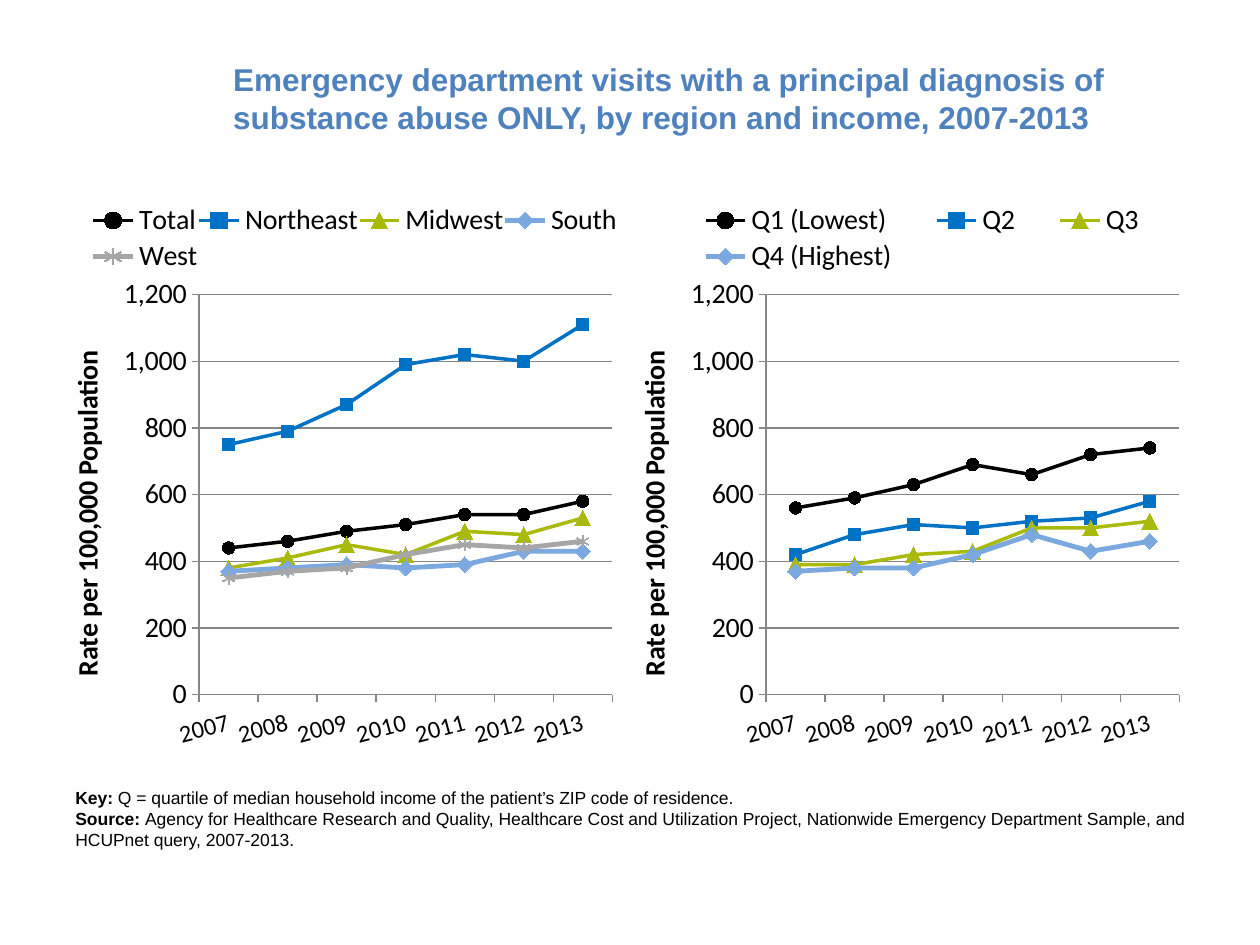
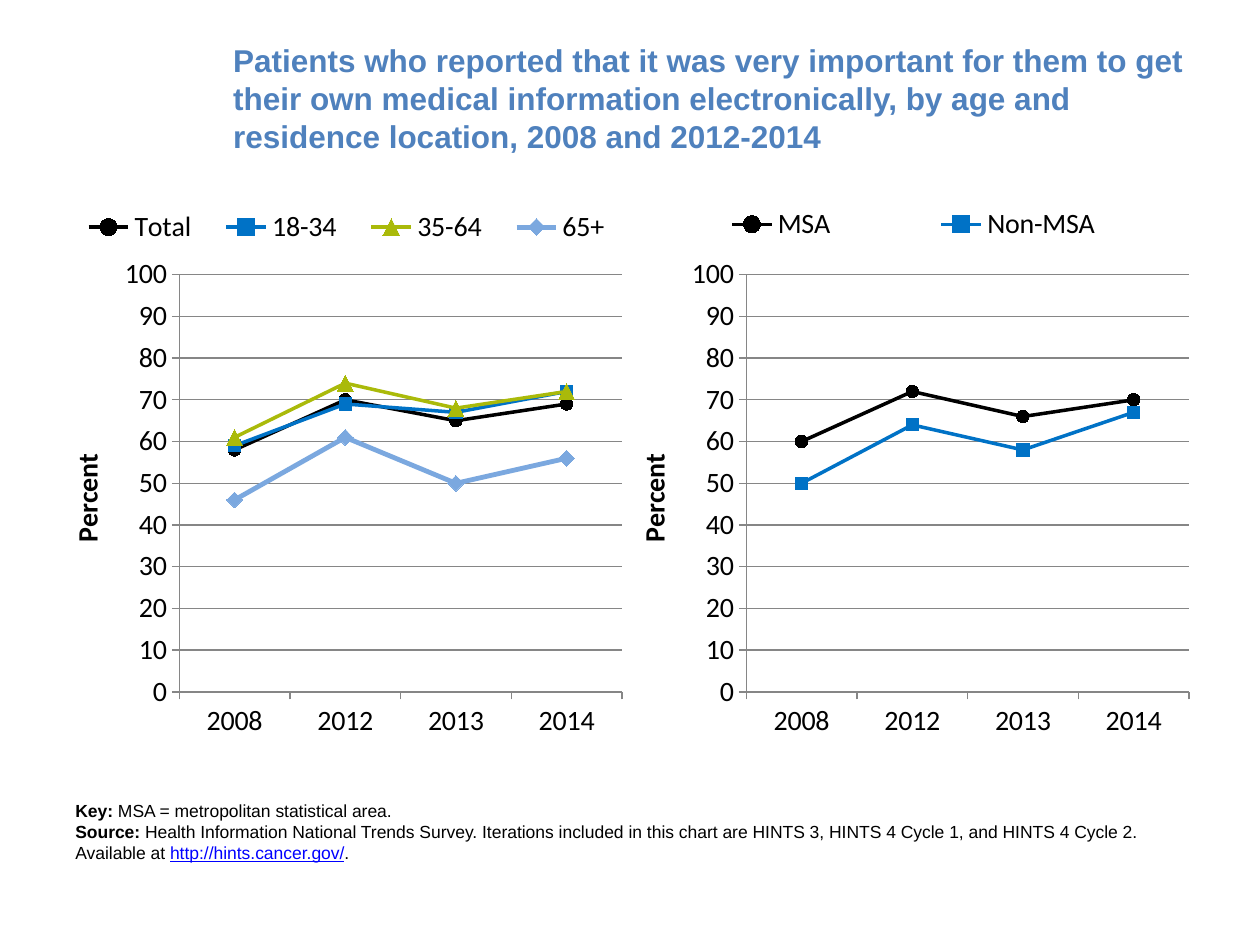
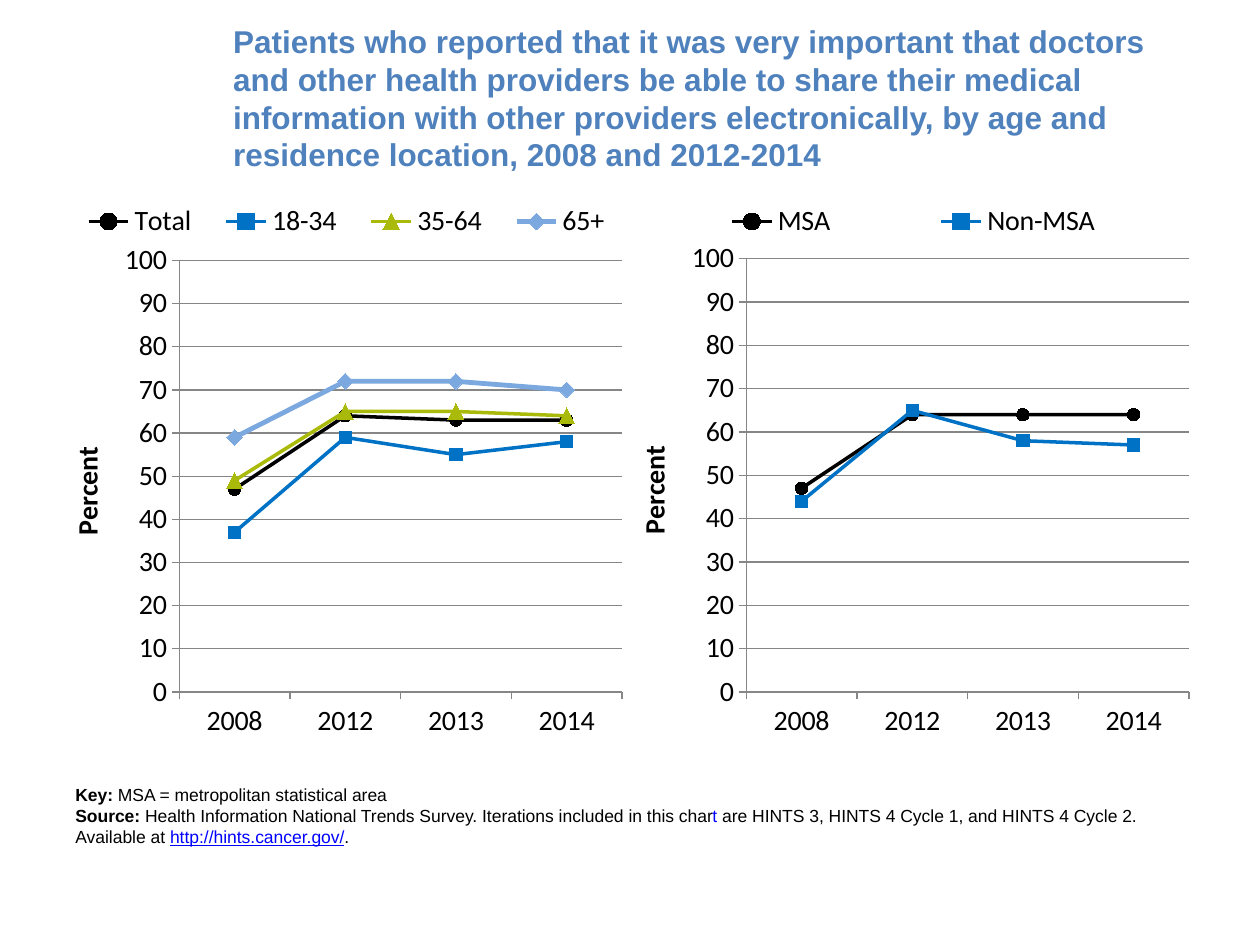
from dataclasses import dataclass

from pptx import Presentation
from pptx.chart.axis import CategoryAxis, ValueAxis
from pptx.chart.chart import Chart
from pptx.chart.data import CategoryChartData
from pptx.chart.series import LineSeries
from pptx.dml.color import RGBColor
from pptx.enum.chart import XL_CHART_TYPE, XL_LEGEND_POSITION, XL_MARKER_STYLE, XL_TICK_MARK
from pptx.enum.text import MSO_ANCHOR, MSO_AUTO_SIZE, PP_ALIGN
from pptx.oxml import parse_xml
from pptx.oxml.ns import nsdecls, qn
from pptx.slide import Slide
from pptx.text.text import Font
from pptx.util import Inches, Pt

BLACK, BLUE, LINK, GREY = "000000", "4F81BD", "0000FF", "868686"
HEAD, BODY = "Arial", "Calibri"
LEFT, TOP, SIDE = 0.5, 1.6, 4.5
Box = tuple[float, float, float, float]


@dataclass(frozen=True)
class Style:
    """Look of the series at one place in a chart."""
    tint: str
    width: float
    mark: XL_MARKER_STYLE
    size: int
    filled: bool = True


@dataclass(frozen=True)
class Scale:
    """Axes shared by the charts of one slide."""
    title: str
    code: str
    top: int
    step: int
    years: tuple[str, ...]
    size: int = 16
    turn: int = 0


@dataclass(frozen=True)
class Panel:
    """One line chart: plot area, legend area and rows of values."""
    plot: Box
    legend: Box
    rows: dict[str, tuple[int, ...]]


@dataclass(frozen=True)
class Run:
    """A piece of footnote text."""
    text: str
    bold: bool = False
    tint: str = BLACK
    line: bool = False


@dataclass(frozen=True)
class Note:
    """A footnote box under the charts."""
    top: float
    width: float
    lines: tuple[tuple[Run, ...], ...]


@dataclass(frozen=True)
class Page:
    """The content of one slide."""
    title: str
    scale: Scale
    panels: tuple[Panel, ...]
    note: Note


STYLES = (
    Style(BLACK, 2, XL_MARKER_STYLE.CIRCLE, 7),
    Style("0072C6", 2, XL_MARKER_STYLE.SQUARE, 7),
    Style("AABA0A", 2, XL_MARKER_STYLE.TRIANGLE, 9),
    Style("7BA8DF", 2.75, XL_MARKER_STYLE.DIAMOND, 9),
    Style("A6A6A6", 2.75, XL_MARKER_STYLE.STAR, 7, False),
)

RATE = Scale("Rate per 100,000 Population", "#,##0", 1200, 200,
             tuple(str(year) for year in range(2007, 2014)), 14, -15)
SHARE = Scale("Percent", "0", 100, 10, ("2008", "2012", "2013", "2014"))
RATE_PLOT = (0.24, 0.164, 0.729, 0.706)
SHARE_PLOT = (0.205, 0.129, 0.781, 0.736)
SITE = (Run("http://hints.cancer.gov/", tint=LINK, line=True), Run("."))
SOURCE = Run("Source:", True)
SURVEY = " Health Information National Trends Survey. Iterations included in this char"
CYCLES = "are HINTS 3, HINTS 4 Cycle 1, and HINTS 4 Cycle 2. Available at "

PAGES = (
    Page(
        "Emergency department visits with a principal diagnosis of substance abuse ONLY, "
        "by region and income, 2007-2013",
        RATE,
        (
            Panel(RATE_PLOT, (0.05, 0, 0.93, 0.13), {
                "Total": (440, 460, 490, 510, 540, 540, 580),
                "Northeast": (750, 790, 870, 990, 1020, 1000, 1110),
                "Midwest": (380, 410, 450, 420, 490, 480, 530),
                "South": (370, 380, 390, 380, 390, 430, 430),
                "West": (350, 370, 380, 420, 450, 440, 460),
            }),
            Panel(RATE_PLOT, (0.07, 0, 0.89, 0.13), {
                "Q1 (Lowest)": (560, 590, 630, 690, 660, 720, 740),
                "Q2": (420, 480, 510, 500, 520, 530, 580),
                "Q3": (390, 390, 420, 430, 500, 500, 520),
                "Q4 (Highest)": (370, 380, 380, 420, 480, 430, 460),
            }),
        ),
        Note(6.2, 9, (
            (Run("Key: ", True),
             Run("Q = quartile of median household income of the patient’s ZIP code of residence.")),
            (Run("Source: ", True),
             Run("Agency for Healthcare Research and Quality, Healthcare Cost and Utilization Project, "
                 "Nationwide Emergency Department Sample, and HCUPnet query, 2007-2013.")),
        )),
    ),
    Page(
        "Patients who reported that it was very important for them to get their own medical "
        "information electronically, by age and residence location, 2008 and 2012-2014",
        SHARE,
        (
            Panel(SHARE_PLOT, (0, 0, 1, 0.09), {
                "Total": (58, 70, 65, 69),
                "18-34": (59, 69, 67, 72),
                "35-64": (61, 74, 68, 72),
                "65+": (46, 61, 50, 56),
            }),
            Panel(SHARE_PLOT, (0, 0, 1, 0.08), {
                "MSA": (60, 72, 66, 70),
                "Non-MSA": (50, 64, 58, 67),
            }),
        ),
        Note(6.3, 9, (
            (Run("Key:", True), Run(" MSA = metropolitan statistical area.")),
            (SOURCE, Run(f"{SURVEY}t {CYCLES}"), *SITE),
        )),
    ),
    Page(
        "Patients who reported that it was very important that doctors and other health providers "
        "be able to share their medical information with other providers electronically, "
        "by age and residence location, 2008 and 2012-2014",
        SHARE,
        (
            Panel((0.205, 0.104, 0.781, 0.761), (0, 0, 1, 0.07), {
                "Total": (47, 64, 63, 63),
                "18-34": (37, 59, 55, 58),
                "35-64": (49, 65, 65, 64),
                "65+": (59, 72, 72, 70),
            }),
            Panel((0.205, 0.101, 0.781, 0.764), (0, 0, 1, 0.07), {
                "MSA": (47, 64, 64, 64),
                "Non-MSA": (44, 65, 58, 57),
            }),
        ),
        Note(6.17, 8.67, (
            (Run("Key: ", True), Run("MSA = metropolitan statistical area")),
            (SOURCE, Run(SURVEY), Run("t ", tint=LINK), Run(CYCLES), *SITE),
        )),
    ),
)


def shade(code: str) -> RGBColor:
    """Turn a hex string into a colour."""
    return RGBColor.from_string(code)


def set_font(font: Font, face: str, size: float, tint: str = BLACK, bold: bool = False) -> None:
    """Set face, size, colour and weight of a font."""
    font.name, font.size, font.bold = face, Pt(size), bold
    font.color.rgb = shade(tint)


def place(owner, index: int, box: Box, inner: bool = False) -> None:
    """Give a plot area or legend a fixed place within its chart."""
    for old in owner.findall(qn("c:layout")):
        owner.remove(old)
    target = '<c:layoutTarget val="inner"/>' if inner else ""
    modes = "".join(f'<c:{key}Mode val="edge"/>' for key in "xy")
    sizes = "".join(f'<c:{key} val="{part}"/>' for key, part in zip("xywh", box))
    owner.insert(index, parse_xml(
        f'<c:layout {nsdecls("c")}><c:manualLayout>{target}{modes}{sizes}</c:manualLayout></c:layout>'))


def style_axis(axis: CategoryAxis | ValueAxis, size: int) -> None:
    """Set the line, ticks and labels of an axis."""
    axis.major_tick_mark = XL_TICK_MARK.OUTSIDE
    axis.minor_tick_mark = XL_TICK_MARK.NONE
    axis.format.line.color.rgb = shade(GREY)
    axis.format.line.width = Pt(0.75)
    set_font(axis.tick_labels.font, BODY, size)


def style_scale(chart: Chart, scale: Scale) -> None:
    """Set both axes of a chart."""
    years, axis = chart.category_axis, chart.value_axis
    style_axis(years, scale.size)
    style_axis(axis, 16)
    years.has_major_gridlines = False
    if scale.turn:
        body = years._element.txPr.bodyPr
        body.set("rot", str(scale.turn * 60000))
        body.set("vert", "horz")
    if axis._element.find(qn("c:crossBetween")) is None:
        axis._element.find(qn("c:crosses")).addnext(
            parse_xml(f'<c:crossBetween {nsdecls("c")} val="between"/>'))
    axis.minimum_scale, axis.maximum_scale, axis.major_unit = 0, scale.top, scale.step
    axis.tick_labels.number_format = scale.code
    axis.tick_labels.number_format_is_linked = False
    axis.has_major_gridlines = True
    axis.major_gridlines.format.line.color.rgb = shade(GREY)
    axis.major_gridlines.format.line.width = Pt(0.75)
    frame = axis.axis_title.text_frame
    frame.text = scale.title
    set_font(frame.paragraphs[0].runs[0].font, BODY, 16, bold=True)


def style_line(line: LineSeries, style: Style) -> None:
    """Set the line and markers of a series."""
    line.smooth = False
    line.format.line.color.rgb = shade(style.tint)
    line.format.line.width = Pt(style.width)
    mark = line.marker
    mark.style, mark.size = style.mark, style.size
    mark.format.line.color.rgb = shade(style.tint)
    if style.filled:
        mark.format.fill.solid()
        mark.format.fill.fore_color.rgb = shade(style.tint)
    else:
        mark.format.fill.background()


def add_panel(slide: Slide, panel: Panel, scale: Scale, left: float) -> None:
    """Draw one line chart."""
    data = CategoryChartData(number_format=scale.code)
    data.categories = scale.years
    for name, row in panel.rows.items():
        data.add_series(name, row)
    chart = slide.shapes.add_chart(XL_CHART_TYPE.LINE_MARKERS, Inches(left), Inches(TOP),
                                   Inches(SIDE), Inches(SIDE), data).chart
    set_font(chart.font, HEAD, 10)
    chart.has_title = False
    chart.has_legend = True
    chart.legend.position = XL_LEGEND_POSITION.TOP
    chart.legend.include_in_layout = False
    set_font(chart.legend.font, BODY, 16)
    style_scale(chart, scale)
    plot = chart.plots[0]
    plot.vary_by_categories = False
    for line, style in zip(plot.series, STYLES):
        style_line(line, style)
    place(chart._chartSpace.chart.plotArea, 0, panel.plot, True)
    place(chart.legend._element, 1, panel.legend)


def add_title(slide: Slide, text: str) -> None:
    """Fill and place the slide title."""
    title = slide.shapes.title
    title.left, title.top, title.width, title.height = map(Inches, (1.75, 0.3, 7.75, 0.95))
    frame = title.text_frame
    frame.text = text
    frame.auto_size = MSO_AUTO_SIZE.NONE
    frame.vertical_anchor = MSO_ANCHOR.MIDDLE
    frame.paragraphs[0].alignment = PP_ALIGN.LEFT
    set_font(frame.paragraphs[0].runs[0].font, HEAD, 18, BLUE, True)


def add_note(slide: Slide, note: Note) -> None:
    """Write the key and source under the charts."""
    box = slide.shapes.add_textbox(Inches(LEFT), Inches(note.top), Inches(note.width), Inches(0.61))
    frame = box.text_frame
    frame.word_wrap = True
    frame.auto_size = MSO_AUTO_SIZE.SHAPE_TO_FIT_TEXT
    for index, runs in enumerate(note.lines):
        line = frame.add_paragraph() if index else frame.paragraphs[0]
        for run in runs:
            part = line.add_run()
            part.text = run.text
            set_font(part.font, HEAD, 10, run.tint, run.bold)
            part.font.underline = run.line


def main() -> None:
    """Build and save the deck."""
    deck = Presentation()
    deck.slide_width, deck.slide_height = Inches(10), Inches(7.5)
    for page in PAGES:
        slide = deck.slides.add_slide(deck.slide_layouts.get_by_name("Title Only"))
        add_title(slide, page.title)
        for index, panel in enumerate(page.panels):
            add_panel(slide, panel, page.scale, LEFT + index * SIDE)
        add_note(slide, page.note)
    deck.save("out.pptx")


if __name__ == "__main__":
    main()
